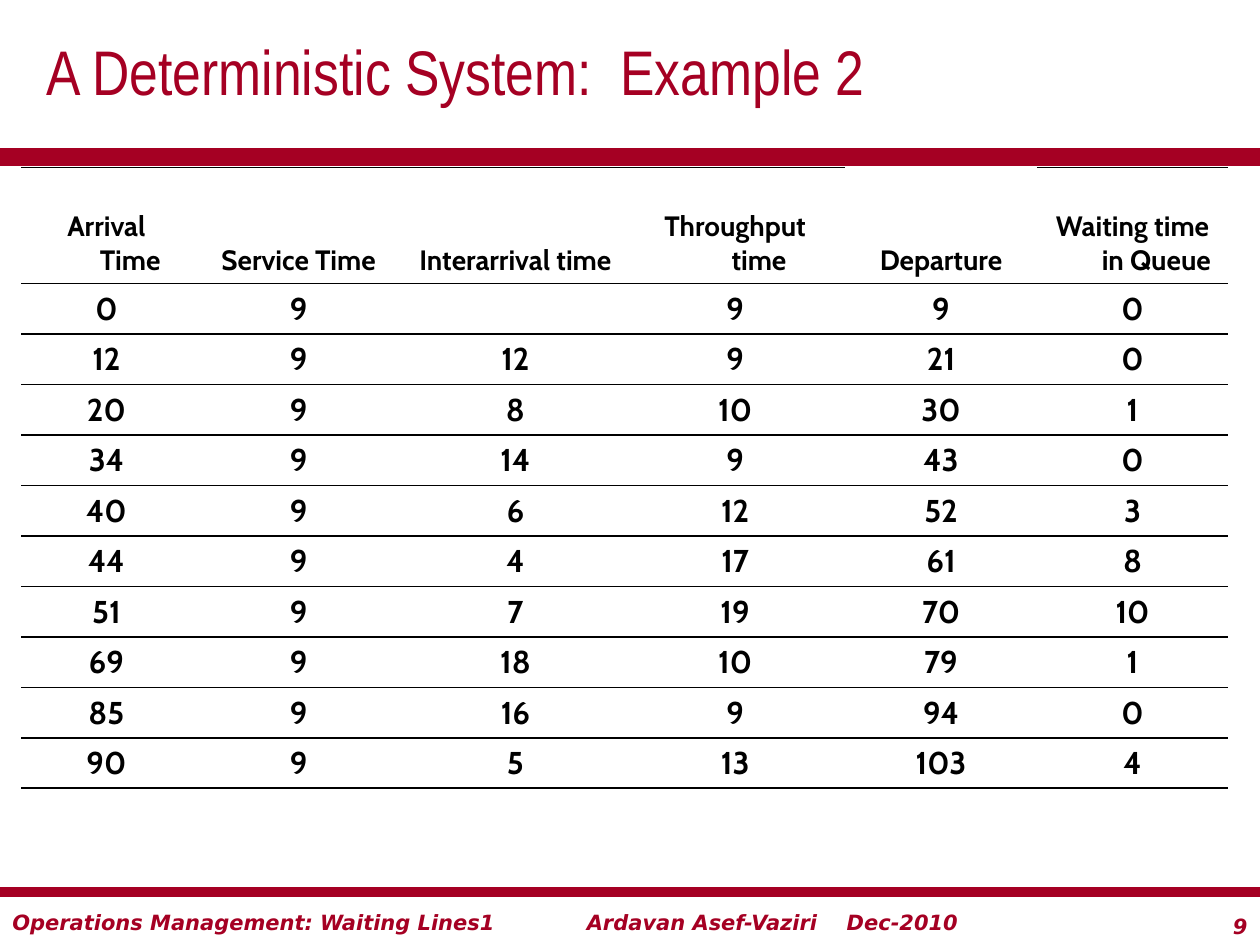
"""Build a slide tabulating a deterministic waiting-line system."""
from lxml import etree
from pptx import Presentation
from pptx.dml.color import RGBColor
from pptx.enum.shapes import MSO_CONNECTOR
from pptx.enum.text import MSO_ANCHOR, PP_ALIGN
from pptx.oxml.ns import qn
from pptx.util import Cm, Pt

LEFT, CENTER, RIGHT = PP_ALIGN.LEFT, PP_ALIGN.CENTER, PP_ALIGN.RIGHT
TOP, MIDDLE, BOTTOM = MSO_ANCHOR.TOP, MSO_ANCHOR.MIDDLE, MSO_ANCHOR.BOTTOM
STRAIGHT = MSO_CONNECTOR.STRAIGHT
COLORS = {"red": "A50023", "black": "000000"}
PLAIN_TABLE = "{2D5ABB26-0587-4C30-8999-92F81FD0307C}"
WIDTH, HEIGHT = 25.4, 19.05

TITLE_FONT = {"name": "Arial Narrow", "size": Pt(36), "bold": False}
FOOTER_FONT = {"name": "DejaVu Sans", "size": Pt(12), "bold": True, "italic": True}
HEAD_FONT = {"name": "Cabin", "size": Pt(16), "bold": True}
BODY_FONT = {**HEAD_FONT, "size": Pt(18)}

TEXTS = [
    ("9", (23.5, 18.29, 1.9, 0.76), FOOTER_FONT, RIGHT, TOP),
    ("Ardavan Asef-Vaziri\tDec-2010", (11.58, 18.21, 8.51, 0.76), FOOTER_FONT, LEFT, TOP),
    ("Operations Management: Waiting Lines1", (0, 18.21, 11.86, 0.76), FOOTER_FONT, LEFT, TOP),
    ("A Deterministic System:  Example 2", (0.69, 0, 24.71, 2.82), TITLE_FONT, LEFT, MIDDLE),
]
DATE_TAB = 5.24
RULES = [(3.17, 10), (17.98, 6)]

HEADS = ["Arrival Time", "Service Time", "Interarrival time",
         "Throughput time", "Departure", "Waiting time in Queue"]
ROWS = [
    (0, 9, "", 9, 9, 0),
    (12, 9, 12, 9, 21, 0),
    (20, 9, 8, 10, 30, 1),
    (34, 9, 14, 9, 43, 0),
    (40, 9, 6, 12, 52, 3),
    (44, 9, 4, 17, 61, 8),
    (51, 9, 7, 19, 70, 10),
    (69, 9, 18, 10, 79, 1),
    (85, 9, 16, 9, 94, 0),
    (90, 9, 5, 13, 103, 4),
]
TABLE_LEFT, TABLE_TOP = 0.43, 3.38
COL_WIDTHS = [3.43, 4.32, 4.42, 4.44, 3.86, 3.86]
ROW_HEIGHTS = [2.34] + [0.89] * len(ROWS)
HANGING = Cm(0.96)


def write(tf, text, font, color, align):
    p = tf.paragraphs[0]
    p.alignment = align
    r = p.add_run()
    r.text = text
    for name, value in font.items():
        setattr(r.font, name, value)
    r.font.color.rgb = RGBColor.from_string(COLORS[color])
    return p


def add_text(s, text, box, font, align, anchor):
    tf = s.shapes.add_textbox(*map(Cm, box)).text_frame
    tf.word_wrap = True
    tf.vertical_anchor = anchor
    p = write(tf, text, font, "red", align)
    if "\t" in text:
        tabs = etree.SubElement(p._p.get_or_add_pPr(), qn("a:tabLst"))
        etree.SubElement(tabs, qn("a:tab"), pos=str(Cm(DATE_TAB)), algn="l")


def add_rule(s, y, weight):
    line = s.shapes.add_connector(STRAIGHT, 0, Cm(y), Cm(WIDTH), Cm(y))
    line.line.color.rgb = RGBColor.from_string(COLORS["red"])
    line.line.width = Pt(weight)
    etree.SubElement(line._element.spPr, qn("a:effectLst"))


def set_borders(cell, sides):
    tcPr = cell._tc.get_or_add_tcPr()
    for i, side in enumerate(sides):
        ln = etree.Element(qn(f"a:ln{side}"), w=str(Pt(1)))
        fill = etree.SubElement(ln, qn("a:solidFill"))
        etree.SubElement(fill, qn("a:srgbClr"), val=COLORS["black"])
        tcPr.insert(i, ln)


def add_table(s):
    grid = [HEADS] + ROWS
    size = sum(COL_WIDTHS), sum(ROW_HEIGHTS)
    frame = s.shapes.add_table(len(grid), len(HEADS), *map(Cm, (TABLE_LEFT, TABLE_TOP, *size)))
    table = frame.table
    table.first_row = table.horz_banding = False
    table._tbl.tblPr.find(qn("a:tableStyleId")).text = PLAIN_TABLE
    for col, width in zip(table.columns, COL_WIDTHS):
        col.width = Cm(width)
    for row, height in zip(table.rows, ROW_HEIGHTS):
        row.height = Cm(height)
    for i, values in enumerate(grid):
        for j, value in enumerate(values):
            cell = table.cell(i, j)
            cell.vertical_anchor = BOTTOM
            cell.fill.background()
            top_ruled = i == 0 and HEADS[j] != "Departure"
            set_borders(cell, "TB" if top_ruled else "B")
            if value != "":
                font = BODY_FONT if i else HEAD_FONT
                p = write(cell.text_frame, str(value), font, "black", CENTER)
                pPr = p._p.get_or_add_pPr()
                pPr.set("marL", str(HANGING))
                pPr.set("indent", str(-HANGING))


def main():
    prs = Presentation()
    prs.slide_width, prs.slide_height = Cm(WIDTH), Cm(HEIGHT)
    s = prs.slides.add_slide(prs.slide_layouts[6])
    for rule in RULES:
        add_rule(s, *rule)
    for item in TEXTS:
        add_text(s, *item)
    add_table(s)
    prs.save("out.pptx")


if __name__ == "__main__":
    main()
